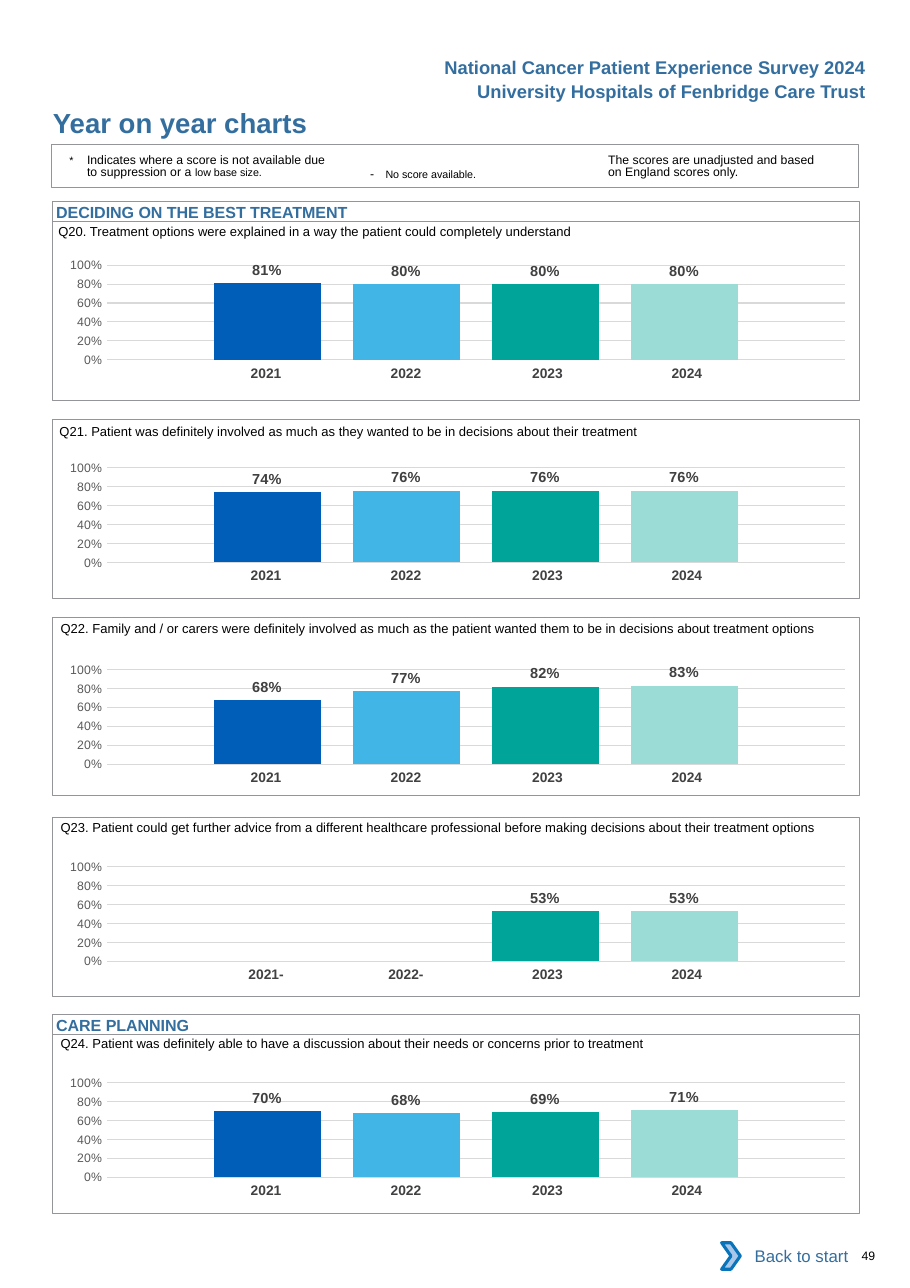
from lxml import etree
from pptx import Presentation
from pptx.chart.data import CategoryChartData
from pptx.dml.color import RGBColor
from pptx.enum.chart import XL_CHART_TYPE as ChartType
from pptx.enum.chart import XL_LABEL_POSITION as LabelPosition
from pptx.enum.chart import XL_TICK_MARK as TickMark
from pptx.enum.shapes import MSO_SHAPE as Shape
from pptx.enum.text import MSO_ANCHOR as Anchor
from pptx.enum.text import PP_ALIGN as Align
from pptx.oxml.ns import qn
from pptx.util import Pt

PX = 9144  # 100 px to the inch
PAGE_SIZE = (826, 1169)
COLORS = {"heading": "336E9F", "text": "000000", "year": "414042", "label": "404040",
          "axis": "595959", "grid": "D9D9D9", "frame": "939598", "white": "FFFFFF",
          "arrow": "A8C7E9", "arrow_edge": "0A74BB"}
BAR_COLORS = ["005EB8", "41B6E6", "00A499", "9CDCD7"]
NO_GRID_STYLE = "{2D5ABB26-0587-4C30-8999-92F81FD0307C}"

TITLE = "Year on year charts"
HEADERS = [("National Cancer Patient Experience Survey 2024", 46),
           ("University Hospitals of Fenbridge Care Trust", 68)]
SECTIONS = [("DECIDING ON THE BEST TREATMENT", 183), ("CARE PLANNING", 921)]
YEARS = ["2021", "2022", "2023", "2024"]
YEARS_NO_SCORE = ["2021-", "2022-", "2023", "2024"]
# question, question left and top, panel top, chart top, years, scores
PANELS = [
    ("Q20. Treatment options were explained in a way the patient could completely understand",
     53, 194, 201, 222, YEARS, [0.81, 0.80, 0.80, 0.80]),
    ("Q21. Patient was definitely involved as much as they wanted to be in decisions about "
     "their treatment",
     54, 375, 381, 406, YEARS, [0.74, 0.76, 0.76, 0.76]),
    ("Q22. Family and / or carers were definitely involved as much as the patient wanted them "
     "to be in decisions about treatment options",
     55, 554, 560, 589, YEARS, [0.68, 0.77, 0.82, 0.83]),
    ("Q23. Patient could get further advice from a different healthcare professional before "
     "making decisions about their treatment options",
     55, 735, 742, 768, YEARS_NO_SCORE, [None, None, 0.53, 0.53]),
    ("Q24. Patient was definitely able to have a discussion about their needs or concerns "
     "prior to treatment",
     55, 931, 939, 964, YEARS, [0.70, 0.68, 0.69, 0.71]),
]
# runs as (text, size), box, hanging indent, line spacing
NOTES = [
    ([("*\t", 7), ("Indicates where a score is not available due to suppression or a ", 8),
      ("low base size.", 7)], (63, 140, 238, 26), 16, 8.1),
    ([("-\t", 8), ("No score available.", 7)], (336, 151, 174, 15), 14, None),
    ([("The scores are unadjusted and based on England scores only.", 8)],
     (552, 140, 196, 26), 0, 8.1),
]
PANEL_LEFT, PANEL_WIDTH, PANEL_HEIGHT = 48, 732, 162
CHART_LEFT, CHART_HEIGHT = 39, 129
PLOT_AREA = {"x": 0.079, "y": 0.145, "w": 0.915, "h": 0.666}
YEAR_LEFT, YEAR_OFFSET, YEAR_HEIGHT = 173, 105, 27
YEAR_WIDTHS = [127, 127, 134, 127]
YEAR_RIGHT_INSETS = [0, 0, 4, 12]


def emu(*lengths):
    return [round(length * PX) for length in lengths]


def rgb(name):
    return RGBColor.from_string(COLORS.get(name, name))


def style_font(font, size, color, bold=False):
    font.name, font.size, font.bold = "Arial", Pt(size), bold
    font.color.rgb = rgb(color)


def set_insets(target, left=0, top=0, right=0, bottom=0):
    (target.margin_left, target.margin_top,
     target.margin_right, target.margin_bottom) = emu(left, top, right, bottom)


def write(frame, runs, color="text", bold=False, align=Align.LEFT):
    frame.word_wrap = True
    para = frame.paragraphs[0]
    para.alignment = align
    for text, size in runs:
        span = para.add_run()
        span.text = text
        style_font(span.font, size, color, bold)
    return para


def add_text(page, box, runs, **options):
    frame = page.shapes.add_textbox(*emu(*box)).text_frame
    set_insets(frame)
    return write(frame, runs, **options)


def add_box(page, kind, box, line=None, weight=0.5, fill=None):
    shape = page.shapes.add_shape(kind, *emu(*box))
    shape.shadow.inherit = False
    if fill:
        shape.fill.solid()
        shape.fill.fore_color.rgb = rgb(fill)
    else:
        shape.fill.background()
    if line:
        shape.line.color.rgb = rgb(line)
        shape.line.width = Pt(weight)
    else:
        shape.line.fill.background()
    return shape


def set_plot_area(chart):
    plot_area = chart.element.find(".//" + qn("c:plotArea"))
    for old in plot_area.findall(qn("c:layout")):
        plot_area.remove(old)
    layout = etree.Element(qn("c:layout"))
    manual = etree.SubElement(layout, qn("c:manualLayout"))
    values = {"layoutTarget": "inner", "xMode": "edge", "yMode": "edge", **PLOT_AREA}
    for tag, value in values.items():
        etree.SubElement(manual, qn("c:" + tag)).set("val", str(value))
    plot_area.insert(0, layout)


def add_score_chart(page, top, scores):
    data = CategoryChartData(number_format="0%")
    data.categories = ["1"]
    for number, score in enumerate(scores, 1):
        data.add_series(f"Series {number}", [score])
    box = emu(CHART_LEFT, top, PANEL_WIDTH, CHART_HEIGHT)
    chart = page.shapes.add_chart(ChartType.COLUMN_CLUSTERED, *box, data).chart
    chart.has_title = chart.has_legend = False
    chart.font.name, chart.font.size = "Calibri", Pt(10)
    chart.font.color.rgb = rgb("text")
    set_plot_area(chart)

    chart.category_axis.visible = False
    axis = chart.value_axis
    axis.minimum_scale, axis.maximum_scale, axis.major_unit = 0, 1, 0.2
    axis.major_tick_mark = axis.minor_tick_mark = TickMark.NONE
    axis.format.line.fill.background()
    axis.major_gridlines.format.line.color.rgb = rgb("grid")
    axis.major_gridlines.format.line.width = Pt(0.75)
    axis.tick_labels.number_format = "0%"
    axis.tick_labels.number_format_is_linked = False
    style_font(axis.tick_labels.font, 8, "axis")

    plot = chart.plots[0]
    plot.gap_width, plot.overlap, plot.vary_by_categories = 200, -30, False
    for series, color in zip(plot.series, BAR_COLORS):
        series.format.fill.solid()
        series.format.fill.fore_color.rgb = rgb(color)
        labels = series.data_labels
        labels.show_value = True
        labels.position = LabelPosition.OUTSIDE_END
        labels.number_format, labels.number_format_is_linked = "0%", False
        style_font(labels.font, 9.5, "label", True)


def add_year_table(page, top, years):
    box = emu(YEAR_LEFT, top, sum(YEAR_WIDTHS), YEAR_HEIGHT)
    frame = page.shapes.add_table(1, len(years), *box)
    frame.element.find(".//" + qn("a:tableStyleId")).text = NO_GRID_STYLE
    table = frame.table
    table.first_row = table.horz_banding = False
    for column, year in enumerate(years):
        table.columns[column].width = emu(YEAR_WIDTHS[column])[0]
        cell = table.cell(0, column)
        cell.fill.background()
        set_insets(cell, 10, 5, YEAR_RIGHT_INSETS[column], 5)
        write(cell.text_frame, [(year, 9)], "year", True, Align.CENTER)


def add_note(page, runs, box, hanging, spacing):
    para = add_text(page, box, runs)
    if spacing:
        para.line_spacing = Pt(spacing)
    if hanging:
        indent = emu(hanging)[0]
        properties = para._p.get_or_add_pPr()
        properties.set("marL", str(indent))
        properties.set("indent", str(-indent))


def main():
    deck = Presentation()
    deck.slide_width, deck.slide_height = emu(*PAGE_SIZE)
    page = deck.slides.add_slide(deck.slide_layouts[5])

    title = page.shapes.title
    title.left, title.top, title.width, title.height = emu(48, 96, 450, 30)
    set_insets(title.text_frame)
    title.text_frame.vertical_anchor = Anchor.TOP
    write(title.text_frame, [(TITLE, 18)], "heading", True)
    for text, top in HEADERS:
        add_text(page, (386, top + 5, 400, 20), [(text, 12)],
                 color="heading", bold=True, align=Align.RIGHT)

    add_box(page, Shape.RECTANGLE, (47, 131, PANEL_WIDTH, 39), "frame", 0.75)
    for note in NOTES:
        add_note(page, *note)

    for question, left, question_top, top, chart_top, years, scores in PANELS:
        add_score_chart(page, chart_top, scores)
        add_year_table(page, chart_top + YEAR_OFFSET, years)
        add_box(page, Shape.RECTANGLE, (PANEL_LEFT, top, PANEL_WIDTH, PANEL_HEIGHT), "frame")
        add_text(page, (left, question_top + 9, 726, 15), [(question, 8.5)])
    for heading, top in SECTIONS:
        band = add_box(page, Shape.RECTANGLE, (PANEL_LEFT, top, PANEL_WIDTH, 18), "frame")
        set_insets(band.text_frame, left=3, top=1)
        band.text_frame.vertical_anchor = Anchor.TOP
        write(band.text_frame, [(heading, 10.5)], "heading", True)

    back = add_box(page, Shape.RECTANGLE, (662, 1119, 118, 42), fill="white")
    back.text_frame.vertical_anchor = Anchor.MIDDLE
    write(back.text_frame, [("Back to start", 11)], "heading", align=Align.RIGHT)
    add_box(page, Shape.CHEVRON, (655, 1128, 17, 24), "arrow_edge", 2, "arrow")
    add_text(page, (782, 1133, 41, 13), [("49", 8)])
    deck.save("out.pptx")


if __name__ == "__main__":
    main()
